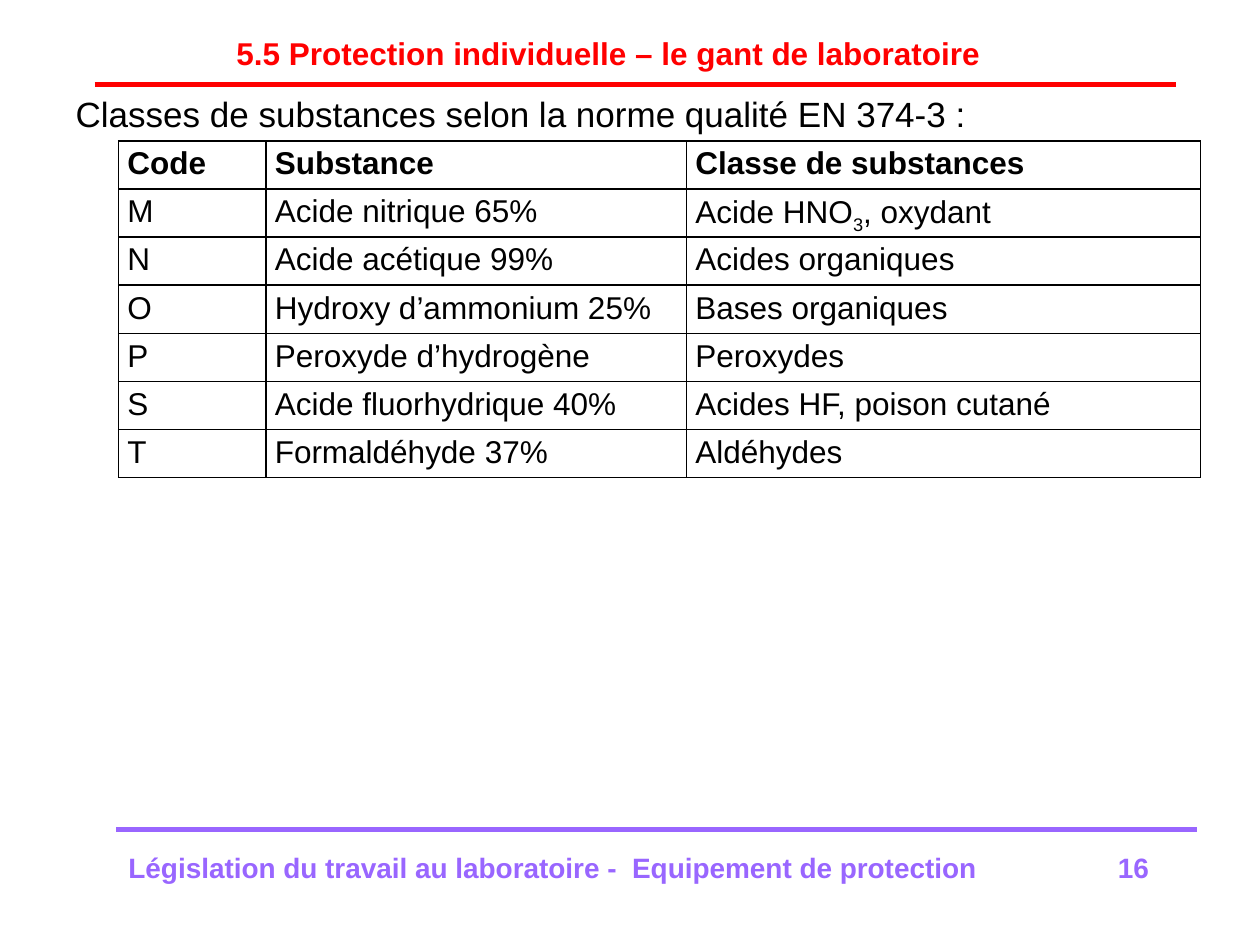
from pptx import Presentation
from pptx.dml.color import RGBColor
from pptx.enum.shapes import MSO_CONNECTOR
from pptx.enum.text import MSO_ANCHOR, PP_ALIGN
from pptx.oxml.ns import qn
from pptx.util import Cm, Pt
from lxml.etree import SubElement

RED = RGBColor(0xFF, 0x00, 0x00)
VIOLET = RGBColor(0x99, 0x66, 0xFF)
BLACK = RGBColor(0x00, 0x00, 0x00)

FONT = "Arial"
COL_WIDTHS = (2.97, 8.48, 10.36)
ROW_HEIGHT = 0.97
ROWS = (
    ("Code", "Substance", "Classe de substances"),
    ("M", "Acide nitrique 65%", ("Acide HNO", "3", ", oxydant")),
    ("N", "Acide acétique 99%", "Acides organiques"),
    ("O", "Hydroxy d’ammonium 25%", "Bases organiques"),
    ("P", "Peroxyde d’hydrogène", "Peroxydes"),
    ("S", "Acide fluorhydrique 40%", "Acides HF, poison cutané"),
    ("T", "Formaldéhyde 37%", "Aldéhydes"),
)


def add_text(p, text, size=18, color=BLACK, bold=False, align=None, subscript=False):
    """Append a formatted run to a paragraph."""
    if align is not None:
        p.alignment = align
    r = p.add_run()
    r.text = text
    r.font.name = FONT
    r.font.size = Pt(size)
    r.font.bold = bold
    r.font.color.rgb = color
    if subscript:
        r.font._element.set("baseline", "-25000")


def place(sp, left, top, width, height):
    sp.left, sp.top, sp.width, sp.height = Cm(left), Cm(top), Cm(width), Cm(height)


def add_title(s, text):
    sp = s.shapes.title
    place(sp, 1.47, 0.43, 21.59, 1.27)
    tf = sp.text_frame
    tf.vertical_anchor = MSO_ANCHOR.MIDDLE
    p = tf.paragraphs[0]
    p.space_before, p.space_after = Pt(12), Pt(3)
    add_text(p, text, color=RED, bold=True, align=PP_ALIGN.CENTER)


def add_body(s, text):
    sp = s.placeholders[1]
    place(sp, 1.27, 1.73, 22.86, 14.17)
    p = sp.text_frame.paragraphs[0]
    add_text(p, text, size=20)
    # Plain line: no bullet, no hanging indent
    pPr = p._p.get_or_add_pPr()
    pPr.set("marL", "0")
    pPr.set("indent", "0")
    SubElement(pPr, qn("a:buNone"))


def add_rule(s, left, top, color, length=21.8):
    line = s.shapes.add_connector(
        MSO_CONNECTOR.STRAIGHT, Cm(left), Cm(top), Cm(left + length), Cm(top))
    line.line.color.rgb = color
    line.line.width = Pt(3)
    SubElement(line._element.spPr, qn("a:effectLst"))


def add_footer(s, text, number):
    sp = s.shapes.add_textbox(Cm(2.34), Cm(16.94), Cm(21.59), Cm(1.07))
    tf = sp.text_frame
    tf.word_wrap = True
    tf.vertical_anchor = MSO_ANCHOR.MIDDLE
    p = tf.paragraphs[0]
    add_text(p, f"{text}\t{number}", size=16, color=VIOLET, bold=True)
    # Page number ends at a right tab stop
    tabs = SubElement(p._p.get_or_add_pPr(), qn("a:tabLst"))
    SubElement(tabs, qn("a:tab"), pos=str(Cm(20.57)), algn="r")


def add_borders(cell):
    tcPr = cell._tc.get_or_add_tcPr()
    for side in ("a:lnL", "a:lnR", "a:lnT", "a:lnB"):
        ln = SubElement(tcPr, qn(side), w=str(Pt(1)))
        fill = SubElement(ln, qn("a:solidFill"))
        SubElement(fill, qn("a:srgbClr"), val=str(BLACK))


def fill_cell(cell, content, bold):
    add_borders(cell)
    cell.fill.background()
    cell.margin_left = cell.margin_right = Cm(0.18)
    cell.margin_top = cell.margin_bottom = 0
    p = cell.text_frame.paragraphs[0]
    p.line_spacing = 1.15
    parts = (content,) if isinstance(content, str) else content
    for i, part in enumerate(parts):
        # Every second part of a formula is a subscript
        add_text(p, part, bold=bold, align=PP_ALIGN.JUSTIFY, subscript=i % 2 == 1)


def add_substance_table(s):
    table = s.shapes.add_table(
        len(ROWS), len(COL_WIDTHS), Cm(2.39), Cm(2.84),
        Cm(sum(COL_WIDTHS)), Cm(ROW_HEIGHT * len(ROWS))).table
    table.horz_banding = False
    for col, width in zip(table.columns, COL_WIDTHS):
        col.width = Cm(width)
    for i, row in enumerate(ROWS):
        table.rows[i].height = Cm(ROW_HEIGHT)
        for j, content in enumerate(row):
            fill_cell(table.cell(i, j), content, bold=i == 0)


def main():
    prs = Presentation()
    prs.slide_width, prs.slide_height = Cm(25.4), Cm(19.05)
    s = prs.slides.add_slide(prs.slide_layouts[1])

    # Heading
    add_title(s, "5.5 Protection individuelle – le gant de laboratoire")
    add_rule(s, 1.91, 1.7, RED)

    # Content
    add_body(s, "Classes de substances selon la norme qualité EN 374-3 :")
    add_substance_table(s)

    # Footer
    add_rule(s, 2.34, 16.72, VIOLET)
    add_footer(s, "Législation du travail au laboratoire -  Equipement de protection", 16)

    prs.save("out.pptx")


if __name__ == "__main__":
    main()
